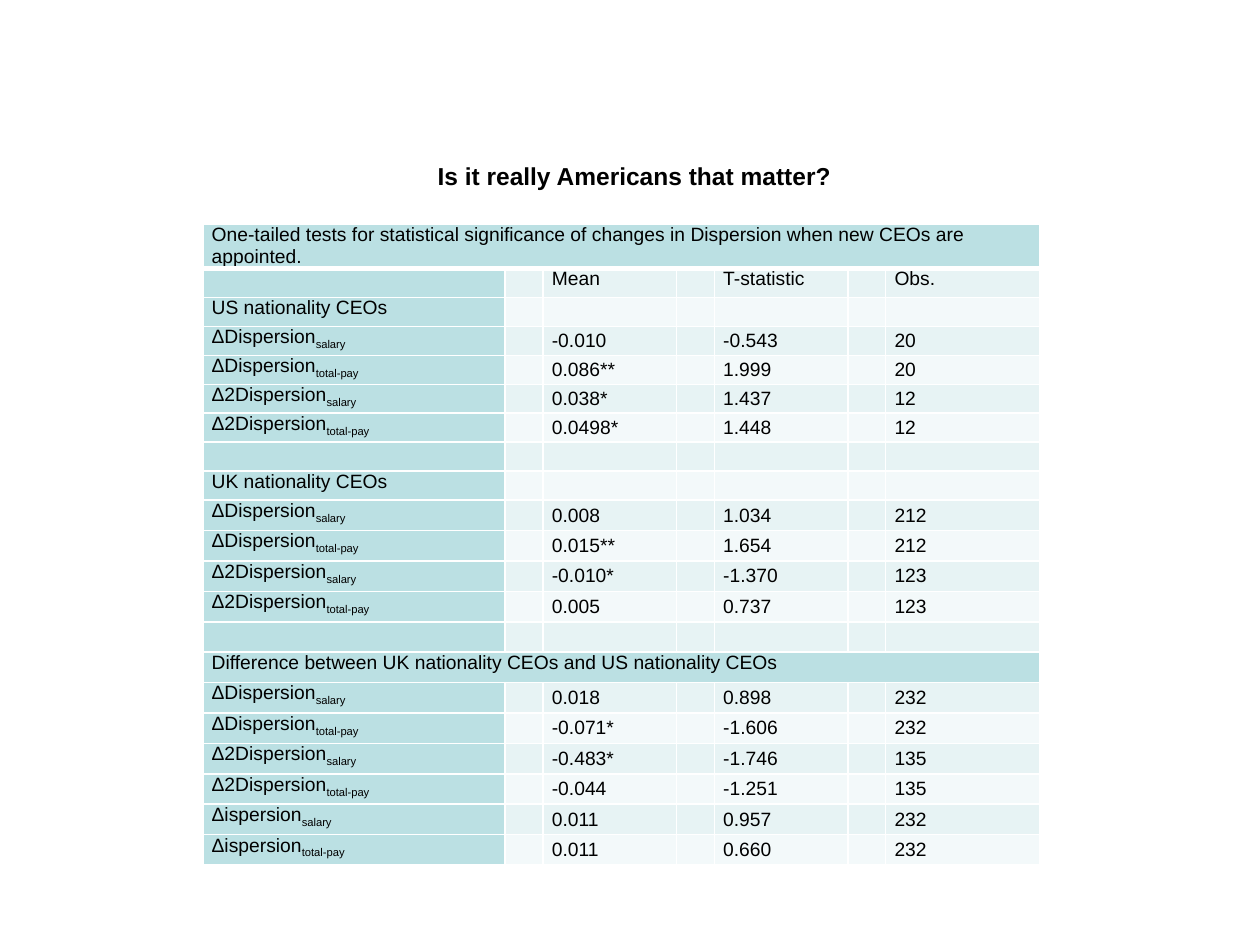
"""Build a slide testing pay dispersion changes by nationality of new CEOs."""
from dataclasses import dataclass

from lxml import etree
from pptx import Presentation, util as u
from pptx.dml.color import RGBColor
from pptx.enum import text
from pptx.oxml import ns

FONT, BLACK, WHITE = "Arial", "000000", "FFFFFF"
LABEL_FILL, BAND_FILLS = "BBE0E3", ("F3F9FA", "E7F3F4")
BODY_SIZE = u.Pt(11)
COLUMN_WIDTHS = (2.4, 0.3, 1.06, 0.3, 1.06, 0.3, 1.22)
VALUE_COLUMNS = (2, 4, 6)
ROW_HEIGHTS = [0.35] + [0.23] * 8 + [2.9 / 12] * 12


@dataclass
class Row:
    label: str = ""
    subscript: str = ""
    values: tuple[str, ...] = ()
    spans_table: bool = False


def results(*stats: tuple[str, str, str], measures=("ΔDispersion", "Δ2Dispersion")) -> list[Row]:
    """Pair each measure and pay type with its statistics."""
    names = [(measure, pay) for measure in measures for pay in ("salary", "total-pay")]
    return [Row(*name, values) for name, values in zip(names, stats)]


ROWS = [
    Row("One-tailed tests for statistical significance of changes in Dispersion "
        "when new CEOs are appointed.", spans_table=True),
    Row(values=("Mean", "T-statistic", "Obs.")),
    Row("US nationality CEOs"),
    *results(("-0.010", "-0.543", "20"), ("0.086**", "1.999", "20"),
             ("0.038*", "1.437", "12"), ("0.0498*", "1.448", "12")),
    Row(),
    Row("UK nationality CEOs"),
    *results(("0.008", "1.034", "212"), ("0.015**", "1.654", "212"),
             ("-0.010*", "-1.370", "123"), ("0.005", "0.737", "123")),
    Row(),
    Row("Difference between UK nationality CEOs and US nationality CEOs", spans_table=True),
    *results(("0.018", "0.898", "232"), ("-0.071*", "-1.606", "232"),
             ("-0.483*", "-1.746", "135"), ("-0.044", "-1.251", "135"),
             ("0.011", "0.957", "232"), ("0.011", "0.660", "232"),
             measures=("ΔDispersion", "Δ2Dispersion", "Δispersion")),
]


def color(value: str) -> RGBColor:
    """Turn a hex string into a colour."""
    return RGBColor.from_string(value)


def apply(target, formats: dict) -> None:
    """Set each attribute of the target from the format values."""
    for name, value in formats.items():
        setattr(target, name, value)


def add_run(paragraph, words: str, size=BODY_SIZE, bold: bool = False, baseline: int = 0) -> None:
    """Append a formatted run to the paragraph."""
    run = paragraph.add_run()
    run.text = words
    apply(run.font, {"name": FONT, "size": size, "bold": bold})
    run.font.color.rgb = color(BLACK)
    if baseline:
        run._r.get_or_add_rPr().set("baseline", str(baseline))


def set_borders(cell, bottom_width: float) -> None:
    """Draw white lines on the four sides of the cell."""
    properties = cell._tc.get_or_add_tcPr()
    widths = {"lnL": 1, "lnR": 1, "lnT": 1, "lnB": bottom_width}
    for position, (side, width) in enumerate(widths.items()):
        line = etree.Element(ns.qn(f"a:{side}"), w=str(u.Pt(width)))
        fill = etree.SubElement(line, ns.qn("a:solidFill"))
        etree.SubElement(fill, ns.qn("a:srgbClr"), val=WHITE)
        properties.insert(position, line)


def format_cell(cell, fill: str, bottom_width: float) -> None:
    """Give the cell its margins, fill, lines and empty-text size."""
    apply(cell, {"margin_left": u.Inches(0.07), "margin_right": u.Inches(0.07),
                 "margin_top": 0, "margin_bottom": 0})
    cell.fill.solid()
    cell.fill.fore_color.rgb = color(fill)
    set_borders(cell, bottom_width)
    paragraph = cell.text_frame.paragraphs[0]._p
    etree.SubElement(paragraph, ns.qn("a:endParaRPr"), sz=str(int(BODY_SIZE.pt * 100)))


def fill_row(table, index: int, row: Row) -> None:
    """Write and format one table row."""
    cells = [table.cell(index, column) for column in range(len(COLUMN_WIDTHS))]
    for column, cell in enumerate(cells):
        is_label = column == 0 or row.spans_table
        format_cell(cell, LABEL_FILL if is_label else BAND_FILLS[index % 2], 3 if index == 0 else 1)
    label = cells[0].text_frame.paragraphs[0]
    if row.label:
        add_run(label, row.label)
    if row.subscript:
        add_run(label, row.subscript, baseline=-25000)
    for column, value in zip(VALUE_COLUMNS, row.values):
        add_run(cells[column].text_frame.paragraphs[0], value)
        if row.label:
            cells[column].vertical_anchor = text.MSO_ANCHOR.MIDDLE
    if row.spans_table:
        cells[0].merge(cells[-1])


def add_title(slide, words: str) -> None:
    """Place the slide title above the table."""
    title = slide.shapes.title
    apply(title, {"left": u.Inches(0.43), "top": u.Inches(1.23),
                  "width": u.Inches(9.21), "height": u.Inches(5.89)})
    apply(title.text_frame, {"word_wrap": True, "vertical_anchor": text.MSO_ANCHOR.TOP})
    paragraph = title.text_frame.paragraphs[0]
    paragraph.alignment = text.PP_ALIGN.CENTER
    add_run(paragraph, words, u.Pt(14), bold=True)


def add_results_table(slide) -> None:
    """Add the table of test results."""
    table = slide.shapes.add_table(
        len(ROWS), len(COLUMN_WIDTHS), u.Inches(1.61), u.Inches(1.78),
        u.Inches(sum(COLUMN_WIDTHS)), u.Inches(sum(ROW_HEIGHTS))).table
    apply(table, {"first_row": False, "horz_banding": False})
    for column, width in zip(table.columns, COLUMN_WIDTHS):
        column.width = u.Inches(width)
    for index, (row, height) in enumerate(zip(ROWS, ROW_HEIGHTS)):
        table.rows[index].height = u.Inches(height)
        fill_row(table, index, row)


def main() -> None:
    """Create and save the presentation."""
    deck = Presentation()
    apply(deck, {"slide_width": u.Inches(10), "slide_height": u.Inches(7.5)})
    slide = deck.slides.add_slide(deck.slide_layouts.get_by_name("Title Only"))
    add_title(slide, "Is it really Americans that matter?")
    add_results_table(slide)
    deck.save("out.pptx")


if __name__ == "__main__":
    main()
